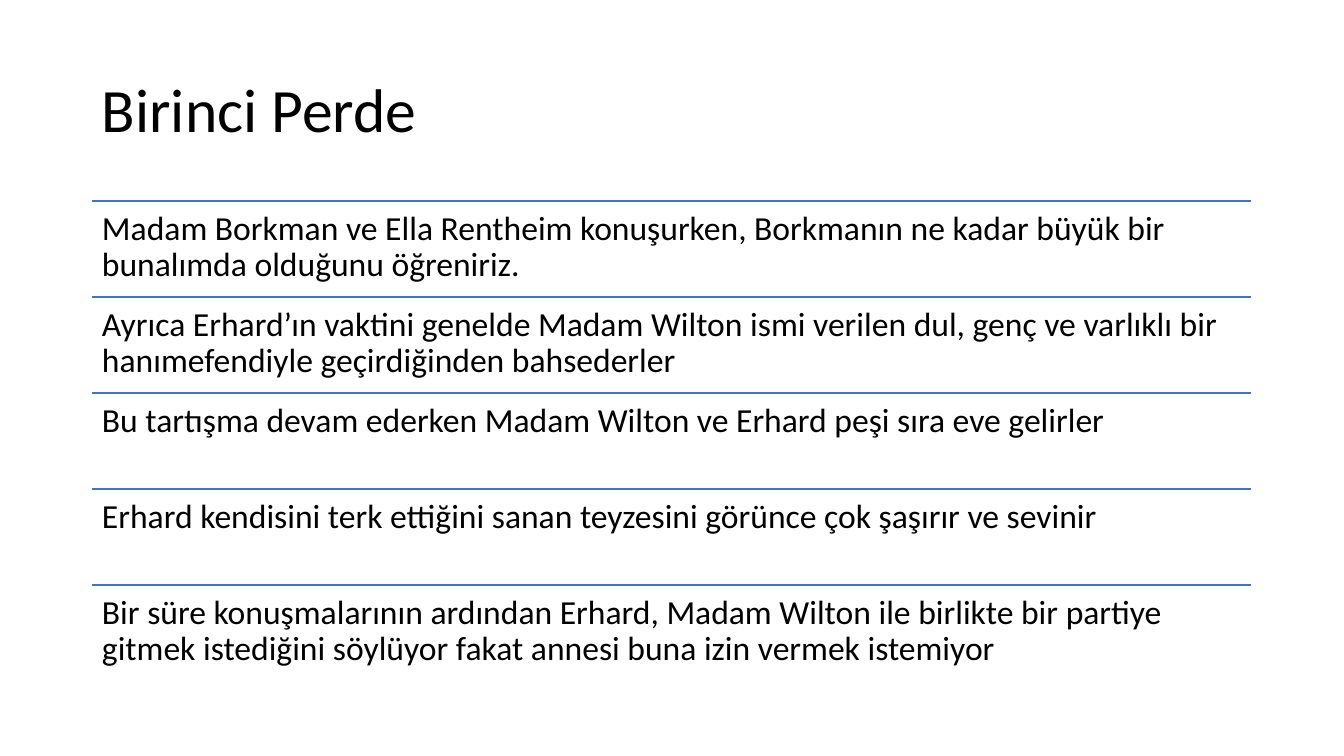
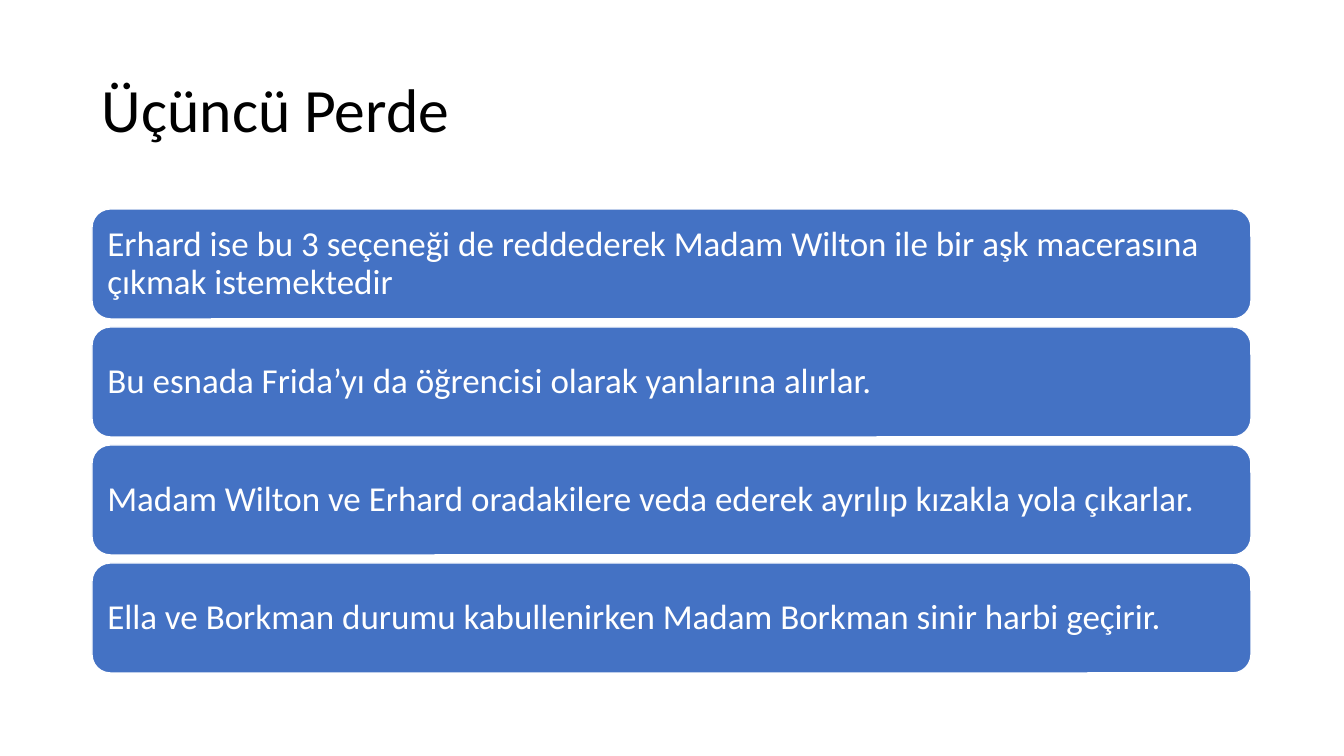
"""Builds two slides on the acts of a play: a ruled list and a stack of cards."""
from dataclasses import dataclass

from lxml import etree
from pptx import Presentation
from pptx.dml.color import RGBColor
from pptx.enum.shapes import MSO_CONNECTOR, MSO_SHAPE
from pptx.enum.text import MSO_ANCHOR, MSO_AUTO_SIZE, PP_ALIGN
from pptx.oxml.ns import qn
from pptx.presentation import Presentation as Deck
from pptx.slide import Slide
from pptx.text.text import TextFrame
from pptx.util import Emu, Pt

STRAIGHT = MSO_CONNECTOR.STRAIGHT
ROUNDED = MSO_SHAPE.ROUNDED_RECTANGLE
TOP, MIDDLE = MSO_ANCHOR.TOP, MSO_ANCHOR.MIDDLE
LEFT = PP_ALIGN.LEFT
NO_AUTOFIT = MSO_AUTO_SIZE.NONE

SLIDE_WIDTH, SLIDE_HEIGHT = 1344, 756
EMU_PER_PX = 12192000 / SLIDE_WIDTH
TITLE_ONLY = 5


@dataclass(frozen=True)
class Theme:
    font: str = "Calibri"
    ink: RGBColor = RGBColor(0x00, 0x00, 0x00)
    paper: RGBColor = RGBColor(0xFF, 0xFF, 0xFF)
    accent: RGBColor = RGBColor(0x44, 0x72, 0xC4)
    title_size: int = 44
    row_size: int = 24
    card_size: int = 25
    line_width: int = 1
    line_spacing: float = 0.9


@dataclass(frozen=True)
class Box:
    left: int
    top: int
    width: int
    height: int

    def emu(self) -> tuple[Emu, Emu, Emu, Emu]:
        return px(self.left), px(self.top), px(self.width), px(self.height)


@dataclass(frozen=True)
class Stack:
    first: Box
    gap: int

    def place(self, index: int) -> Box:
        top = self.first.top + index * (self.first.height + self.gap)
        return Box(self.first.left, top, self.first.width, self.first.height)


@dataclass(frozen=True)
class Act:
    title: str
    events: tuple[str, ...]


THEME = Theme()
INSET = 10
TITLE_BOX = Box(92, 40, 1159, 146)
ROWS = Stack(Box(92, 201, 1159, 96), gap=0)
CARDS = Stack(Box(92, 209, 1159, 110), gap=8)

FIRST_ACT = Act("Birinci Perde", (
    "Madam Borkman ve Ella Rentheim konuşurken, Borkmanın ne kadar büyük bir "
    "bunalımda olduğunu öğreniriz.",
    "Ayrıca Erhard’ın vaktini genelde Madam Wilton ismi verilen dul, genç ve "
    "varlıklı bir hanımefendiyle geçirdiğinden bahsederler",
    "Bu tartışma devam ederken Madam Wilton ve Erhard peşi sıra eve gelirler",
    "Erhard kendisini terk ettiğini sanan teyzesini görünce çok şaşırır ve sevinir",
    "Bir süre konuşmalarının ardından Erhard, Madam Wilton ile birlikte bir "
    "partiye gitmek istediğini söylüyor fakat annesi buna izin vermek istemiyor",
))
THIRD_ACT = Act("Üçüncü Perde", (
    "Erhard ise bu 3 seçeneği de reddederek Madam Wilton ile bir aşk macerasına "
    "çıkmak istemektedir",
    "Bu esnada Frida’yı da öğrencisi olarak yanlarına alırlar.",
    "Madam Wilton ve Erhard oradakilere veda ederek ayrılıp kızakla yola çıkarlar.",
    "Ella ve Borkman durumu kabullenirken Madam Borkman sinir harbi geçirir.",
))


def px(length: int) -> Emu:
    return Emu(round(length * EMU_PER_PX))


def write(frame: TextFrame, text: str, size: int, color: RGBColor,
          anchor: MSO_ANCHOR) -> None:
    frame.word_wrap = True
    frame.auto_size = NO_AUTOFIT
    frame.vertical_anchor = anchor
    frame.margin_left = frame.margin_right = px(INSET)
    frame.margin_top = frame.margin_bottom = px(INSET)
    paragraph = frame.paragraphs[0]
    paragraph.alignment = LEFT
    paragraph.line_spacing = THEME.line_spacing
    run = paragraph.add_run()
    run.text = text
    run.font.name = THEME.font
    run.font.size = Pt(size)
    run.font.color.rgb = color


def add_act_slide(deck: Deck, title: str) -> Slide:
    slide = deck.slides.add_slide(deck.slide_layouts[TITLE_ONLY])
    heading = slide.shapes.title
    heading.left, heading.top, heading.width, heading.height = TITLE_BOX.emu()
    write(heading.text_frame, title, THEME.title_size, THEME.ink, MIDDLE)
    return slide


def draw_row(slide: Slide, box: Box, event: str) -> None:
    left, top, width, height = box.emu()
    rule = slide.shapes.add_connector(STRAIGHT, left, top, left + width, top)
    rule.line.color.rgb = THEME.accent
    rule.line.width = Pt(THEME.line_width)
    etree.SubElement(rule._element.spPr, qn("a:effectLst"))
    row = slide.shapes.add_textbox(left, top, width, height)
    write(row.text_frame, event, THEME.row_size, THEME.ink, TOP)


def draw_card(slide: Slide, box: Box, event: str) -> None:
    card = slide.shapes.add_shape(ROUNDED, *box.emu())
    card.shadow.inherit = False
    card.fill.solid()
    card.fill.fore_color.rgb = THEME.accent
    card.line.color.rgb = THEME.paper
    card.line.width = Pt(THEME.line_width)
    write(card.text_frame, event, THEME.card_size, THEME.paper, MIDDLE)


def main() -> None:
    deck = Presentation()
    deck.slide_width, deck.slide_height = px(SLIDE_WIDTH), px(SLIDE_HEIGHT)
    for act, stack, draw_event in (
        (FIRST_ACT, ROWS, draw_row),
        (THIRD_ACT, CARDS, draw_card),
    ):
        slide = add_act_slide(deck, act.title)
        for index, event in enumerate(act.events):
            draw_event(slide, stack.place(index), event)
    deck.save("out.pptx")


if __name__ == "__main__":
    main()
